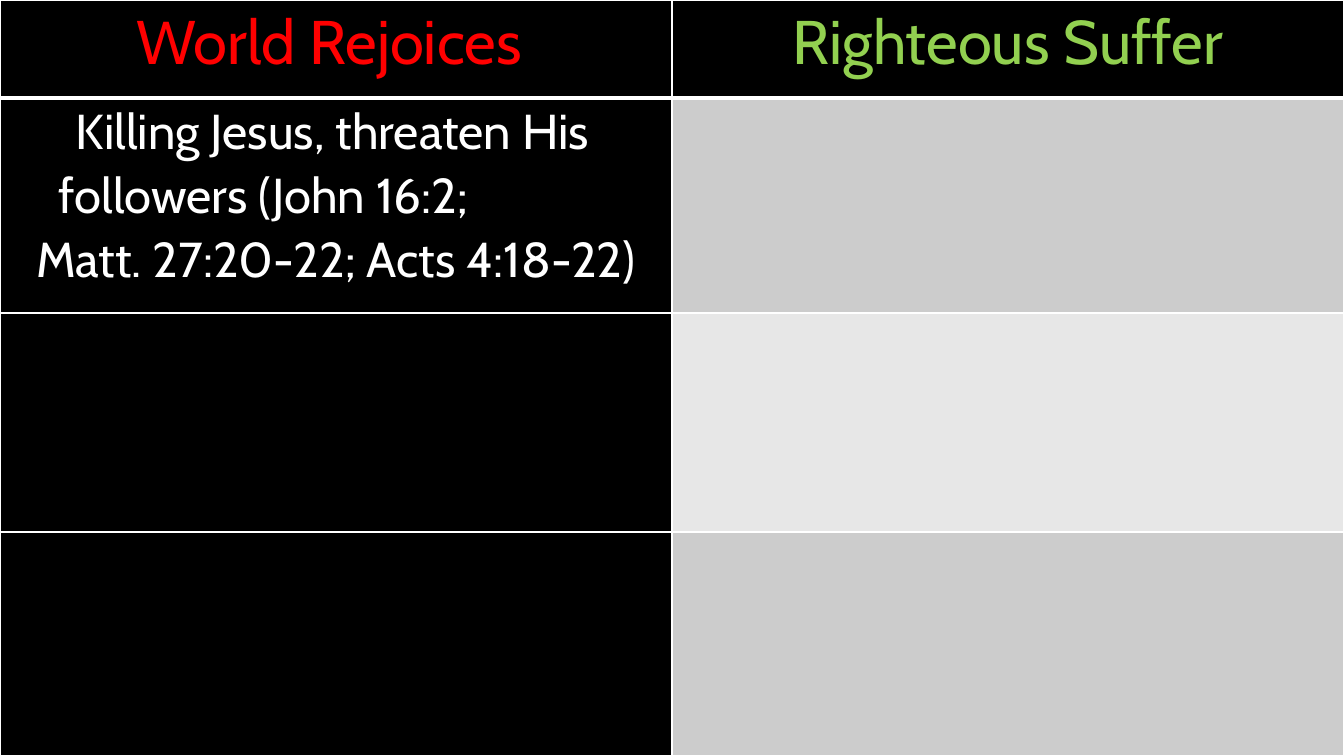
from lxml import etree
from pptx import Presentation
from pptx.dml.color import RGBColor
from pptx.enum.text import PP_ALIGN
from pptx.oxml.ns import qn
from pptx.util import Emu, Pt

CENTER, LEFT = PP_ALIGN.CENTER, PP_ALIGN.LEFT

# Content: (row, column) -> paragraphs
HEADINGS = {0: "World Rejoices ", 1: "Righteous Suffer"}
REJOICING = "Killing Jesus, threaten His followers (John 16:2;"
REFERENCES = "Matt. 27:20-22; Acts 4:18-22)"
ROW_HEIGHTS = [98, 215, 219, 224]
COLUMN_WIDTHS = [672, 672]
SIDE_INSET = 7
HANG_MARGIN, FIRST_INDENT = 52, 17

THEME = {
    "font": "Cabin",
    "heading_size": 44,
    "body_size": 35,
    "heading_colors": ["FF0000", "92D050"],
    "body_color": "FFFFFF",
    "background": "000000",
    "bands": ["CCCCCC", "E7E7E7"],
    "border": "FFFFFF",
}


def px(length):
    return Emu(round(length * 12192000 / 1344))


def add_text(paragraph, text, size, color, alignment=CENTER):
    paragraph.alignment = alignment
    paragraph.line_spacing = 1.07
    run = paragraph.add_run()
    run.text = text
    run.font.name = THEME["font"]
    run.font.size = Pt(size)
    run.font.bold = False
    run.font.color.rgb = RGBColor.from_string(color)


def set_borders(cell, widths):
    properties = cell._tc.get_or_add_tcPr()
    for position, (side, width) in enumerate(widths.items()):
        line = etree.Element(qn(f"a:ln{side}"), w=str(Pt(width)))
        fill = etree.SubElement(line, qn("a:solidFill"))
        etree.SubElement(fill, qn("a:srgbClr"), val=THEME["border"])
        properties.insert(position, line)


# Slide
presentation = Presentation()
presentation.slide_width = px(sum(COLUMN_WIDTHS))
presentation.slide_height = px(sum(ROW_HEIGHTS))
slide = presentation.slides.add_slide(presentation.slide_layouts[6])
slide.background.fill.solid()
slide.background.fill.fore_color.rgb = RGBColor.from_string(THEME["background"])

# Table grid
table = slide.shapes.add_table(
    len(ROW_HEIGHTS), len(COLUMN_WIDTHS), 0, 0,
    presentation.slide_width, presentation.slide_height).table
table.first_row = False
table.horz_banding = False
for column, width in zip(table.columns, COLUMN_WIDTHS):
    column.width = px(width)
for row, height in zip(table.rows, ROW_HEIGHTS):
    row.height = px(height)

# Cell fills, insets and borders
for row_index in range(len(ROW_HEIGHTS)):
    for column_index in range(len(COLUMN_WIDTHS)):
        cell = table.cell(row_index, column_index)
        cell.margin_left = cell.margin_right = px(SIDE_INSET)
        cell.margin_top = cell.margin_bottom = 0
        banded = row_index > 0 and column_index == 1
        color = THEME["bands"][(row_index - 1) % 2] if banded else THEME["background"]
        cell.fill.solid()
        cell.fill.fore_color.rgb = RGBColor.from_string(color)
        set_borders(cell, {"L": 1, "R": 1,
                           "T": 3 if row_index == 1 else 1,
                           "B": 3 if row_index == 0 else 1})

# Headings
for column_index, heading in HEADINGS.items():
    add_text(table.cell(0, column_index).text_frame.paragraphs[0], heading,
             THEME["heading_size"], THEME["heading_colors"][column_index])

# Body text: an indented statement, then centred references
body = table.cell(1, 0).text_frame
statement = body.paragraphs[0]
add_text(statement, REJOICING, THEME["body_size"], THEME["body_color"], LEFT)
indents = statement._p.get_or_add_pPr()
indents.set("marL", str(px(HANG_MARGIN)))
indents.set("indent", str(px(FIRST_INDENT)))
add_text(body.add_paragraph(), REFERENCES, THEME["body_size"], THEME["body_color"])

presentation.save("out.pptx")
